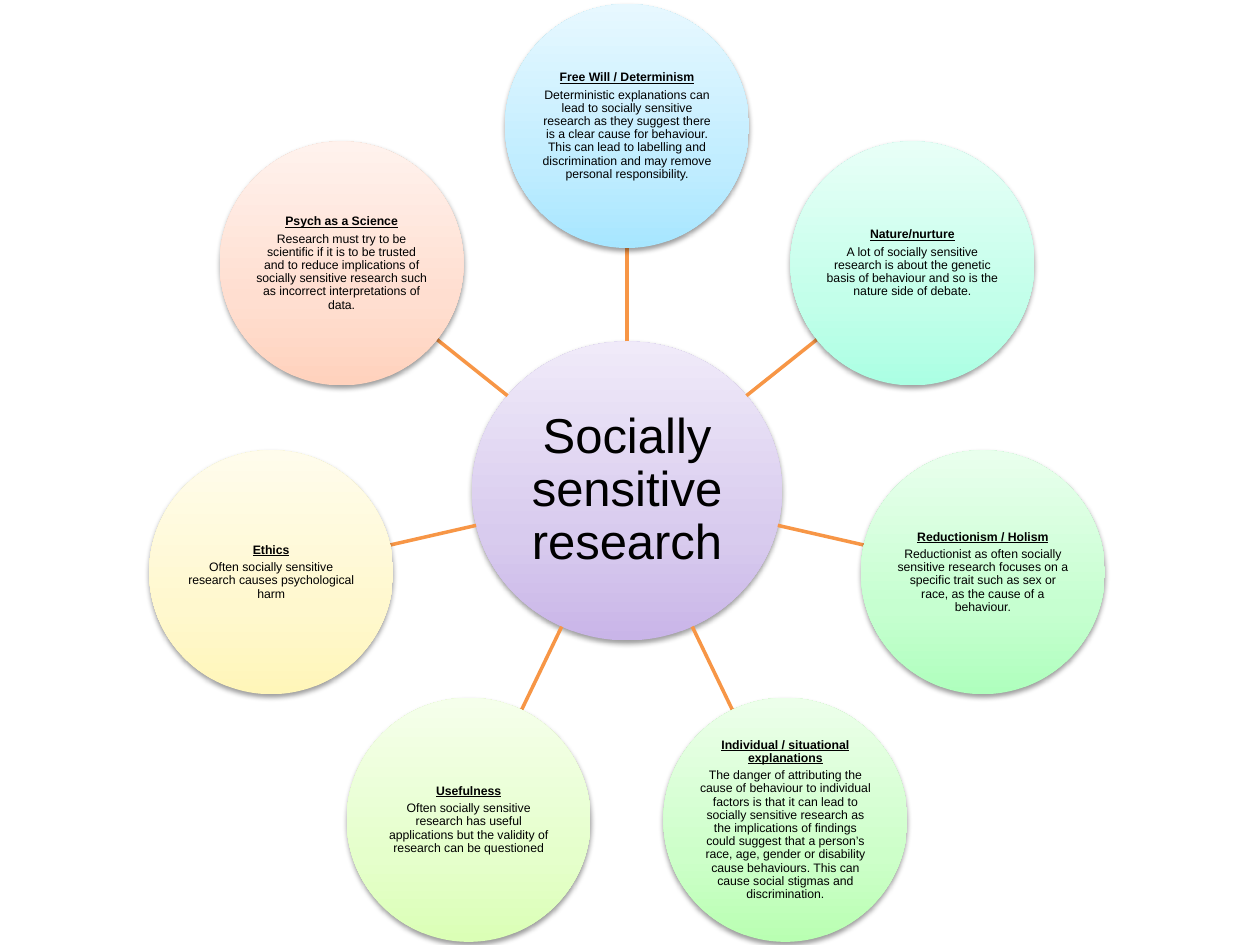
from math import cos, hypot, pi, sin

from lxml.etree import SubElement
from pptx import Presentation
from pptx.dml.color import RGBColor
from pptx.enum.shapes import MSO_CONNECTOR, MSO_SHAPE
from pptx.enum.text import MSO_ANCHOR, MSO_AUTO_SIZE, PP_ALIGN
from pptx.oxml.ns import qn
from pptx.util import Emu, Pt

EMU_PER_PX = 914400 / 126
CENTRE_X, CENTRE_Y = 627, 491
HUB_WIDTH, HUB_HEIGHT = 310, 299
TITLE_WIDTH, TITLE_HEIGHT = 219, 212
TOPIC_SIZE = 244
RING_RADIUS = 365

COLOURS = {"text": "000000", "spoke": "F79646"}
# Gradient stops from the bottom of a circle to its top
GRADIENTS = {
    "violet": ("C9B5E8", "D8CBEE", "F0EAF9"),
    "sky": ("A7E6FF", "C1EDFF", "E7F8FF"),
    "aqua": ("ABFFE3", "C3FFEA", "E8FFF7"),
    "mint": ("AFFFBD", "C6FFD0", "E9FFED"),
    "green": ("B9FFB2", "CDFFC9", "ECFFEA"),
    "lime": ("DBFFB6", "E5FFCB", "F5FFEB"),
    "yellow": ("FFF6B9", "FFF8CE", "FFFCEC"),
    "peach": ("FFD2BD", "FFDED0", "FFF2ED"),
}
STOP_POSITIONS = (0, 35, 100)

HUB_FONT = {"name": "Arial", "size": Pt(28), "bold": False, "underline": False}
BODY_FONT = {"name": "Arial", "size": Pt(7), "bold": False, "underline": False}
HEADING_FONT = BODY_FONT | {"bold": True, "underline": True}
FRAME_FORMAT = {
    "word_wrap": True,
    "auto_size": MSO_AUTO_SIZE.NONE,
    "vertical_anchor": MSO_ANCHOR.MIDDLE,
}
MARGINS = ("margin_left", "margin_top", "margin_right", "margin_bottom")

# Clockwise from the top
TOPICS = [
    ("Free Will / Determinism",
     "Deterministic explanations can lead to socially sensitive research as "
     "they suggest there is a clear cause for behaviour. This can lead to "
     "labelling and discrimination and may remove personal responsibility.",
     "sky"),
    ("Nature/nurture",
     "A lot of socially sensitive research is about the genetic basis of "
     "behaviour and so is the nature side of debate.",
     "aqua"),
    ("Reductionism / Holism",
     "Reductionist as often socially sensitive research focuses on a specific "
     "trait such as sex or race, as the cause of a behaviour.",
     "mint"),
    ("Individual / situational explanations",
     "The danger of attributing the cause of behaviour to individual factors "
     "is that it can lead to socially sensitive research as the implications "
     "of findings could suggest that a person’s race, age, gender or "
     "disability cause behaviours. This can cause social stigmas and "
     "discrimination.",
     "green"),
    ("Usefulness",
     "Often socially sensitive research has useful applications but the "
     "validity of research can be questioned",
     "lime"),
    ("Ethics",
     "Often socially sensitive research causes psychological harm",
     "yellow"),
    ("Psych as a Science",
     "Research must try to be scientific if it is to be trusted and to reduce "
     "implications of socially sensitive research such as incorrect "
     "interpretations of data.",
     "peach"),
]


def px(length):
    return Emu(round(length * EMU_PER_PX))


def centred_box(x, y, width, height):
    return [px(v) for v in (x - width / 2, y - height / 2, width, height)]


def apply_format(target, values):
    for name, value in values.items():
        setattr(target, name, value)


def add_gradient(shape, stops):
    """Fill with three stops, which python-pptx alone limits to two."""
    shape.fill.gradient()
    shape.fill.gradient_angle = 90
    stop_list = shape.element.spPr.find(qn("a:gradFill")).find(qn("a:gsLst"))
    for old_stop in list(stop_list):
        stop_list.remove(old_stop)
    for position, colour in zip(STOP_POSITIONS, stops):
        stop = SubElement(stop_list, qn("a:gs"), pos=str(position * 1000))
        SubElement(stop, qn("a:srgbClr"), val=colour)


def add_soft_shadow(shape):
    shape.shadow.inherit = False
    effects = shape.element.spPr.find(qn("a:effectLst"))
    shadow = SubElement(effects, qn("a:outerShdw"), blurRad="40000",
                        dist="20000", dir="5400000", rotWithShape="0")
    colour = SubElement(shadow, qn("a:srgbClr"), val="000000")
    SubElement(colour, qn("a:alpha"), val="38000")


def add_circle(slide, x, y, width, height, gradient):
    circle = slide.shapes.add_shape(
        MSO_SHAPE.OVAL, *centred_box(x, y, width, height))
    add_gradient(circle, GRADIENTS[gradient])
    circle.line.fill.background()
    add_soft_shadow(circle)
    return circle


def write_text(shape, paragraphs, margin=0):
    """Write (text, font values) pairs as centred paragraphs."""
    frame = shape.text_frame
    apply_format(frame, FRAME_FORMAT | dict.fromkeys(MARGINS, px(margin)))
    for index, (text, font_values) in enumerate(paragraphs):
        paragraph = frame.add_paragraph() if index else frame.paragraphs[0]
        apply_format(paragraph, {
            "alignment": PP_ALIGN.CENTER,
            "line_spacing": 0.9,
            "space_before": Pt(0),
            "space_after": Pt(0.35 * font_values["size"].pt),
        })
        run = paragraph.add_run()
        run.text = text
        apply_format(run.font, font_values)
        run.font.color.rgb = RGBColor.from_string(COLOURS["text"])


def add_hub(slide, text):
    hub = add_circle(slide, CENTRE_X, CENTRE_Y, HUB_WIDTH, HUB_HEIGHT, "violet")
    title = slide.shapes.title
    box = centred_box(CENTRE_X, CENTRE_Y, TITLE_WIDTH, TITLE_HEIGHT)
    apply_format(title, dict(zip(("left", "top", "width", "height"), box)))
    write_text(title, [(text, HUB_FONT)], margin=2)
    hub.element.addnext(title.element)


def add_spoke(slide, dx, dy):
    """Join the hub's edge to a topic's edge along the unit vector (dx, dy)."""
    start = 1 / hypot(2 * dx / HUB_WIDTH, 2 * dy / HUB_HEIGHT)
    end = RING_RADIUS - TOPIC_SIZE / 2
    ends = [px(v) for r in (start, end)
            for v in (CENTRE_X + r * dx, CENTRE_Y + r * dy)]
    spoke = slide.shapes.add_connector(MSO_CONNECTOR.STRAIGHT, *ends)
    spoke.line.width = Pt(2)
    spoke.line.color.rgb = RGBColor.from_string(COLOURS["spoke"])
    SubElement(spoke.element.spPr, qn("a:effectLst"))


def add_topic(slide, dx, dy, heading, body, gradient):
    topic = add_circle(slide, CENTRE_X + RING_RADIUS * dx,
                       CENTRE_Y + RING_RADIUS * dy,
                       TOPIC_SIZE, TOPIC_SIZE, gradient)
    write_text(topic, [(heading, HEADING_FONT), (body, BODY_FONT)])


def main():
    deck = Presentation()
    deck.slide_width, deck.slide_height = px(1260), px(945)
    slide = deck.slides.add_slide(deck.slide_layouts.get_by_name("Title Only"))
    add_hub(slide, "Socially sensitive research")
    for index, topic in enumerate(TOPICS):
        angle = 2 * pi * index / len(TOPICS)
        dx, dy = sin(angle), -cos(angle)
        add_spoke(slide, dx, dy)
        add_topic(slide, dx, dy, *topic)
    deck.save("out.pptx")


if __name__ == "__main__":
    main()
